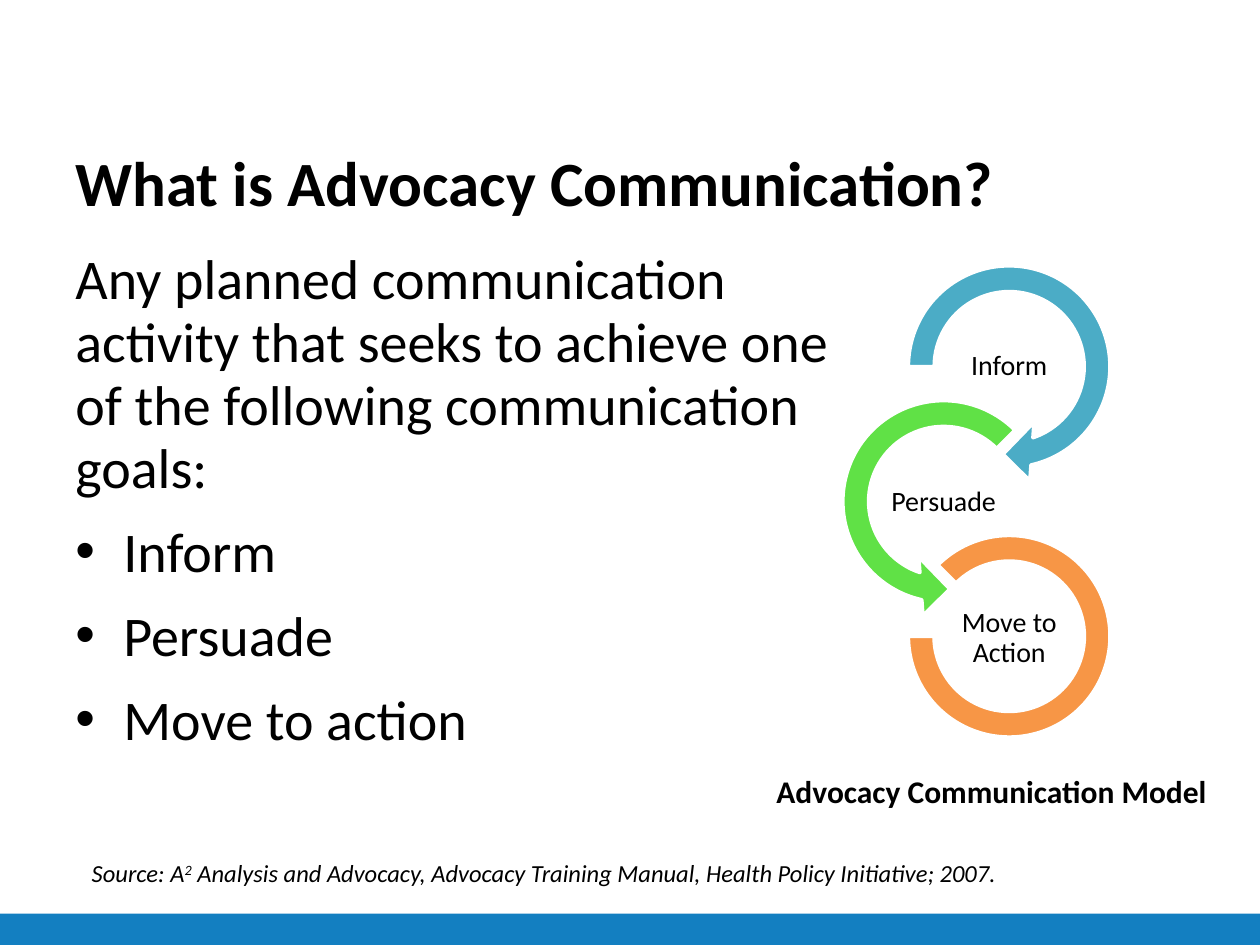
from dataclasses import dataclass

from lxml import etree
from pptx import Presentation
from pptx.dml.color import RGBColor
from pptx.enum.shapes import MSO_SHAPE
from pptx.enum.text import MSO_ANCHOR, PP_ALIGN
from pptx.oxml.ns import qn
from pptx.util import Inches, Pt

RECTANGLE = MSO_SHAPE.RECTANGLE
RIGHT_ARROW, LEFT_ARROW = MSO_SHAPE.CIRCULAR_ARROW, MSO_SHAPE.LEFT_CIRCULAR_ARROW
ARC = MSO_SHAPE.BLOCK_ARC
LEFT, CENTER = PP_ALIGN.LEFT, PP_ALIGN.CENTER
TOP, MIDDLE = MSO_ANCHOR.TOP, MSO_ANCHOR.MIDDLE
TITLE_ONLY = 5
COLUMNS, ROWS = 100, 75


@dataclass(frozen=True)
class Theme:
    font: str = "Calibri"
    ink: str = "000000"
    paper: str = "FFFFFF"
    bar: str = "137FC1"
    inform: str = "4BACC6"
    persuade: str = "60E146"
    act: str = "F79646"
    title: int = 36
    body: int = 32
    caption: int = 18
    label: int = 16
    source: int = 14


def apply(target, values):
    for name, value in values.items():
        setattr(target, name, value)


class SlideBuilder:
    def __init__(self, deck, theme):
        self.theme = theme
        self.cell_width = deck.slide_width / COLUMNS
        self.cell_height = deck.slide_height / ROWS
        self.page = deck.slides.add_slide(deck.slide_layouts[TITLE_ONLY])

    def area(self, column, row, columns, rows):
        return (round(column * self.cell_width), round(row * self.cell_height),
                round(columns * self.cell_width), round(rows * self.cell_height))

    def format_font(self, font, size, **values):
        apply(font, {"name": self.theme.font, "size": Pt(size), **values})
        font.color.rgb = RGBColor.from_string(self.theme.ink)

    def title(self, text, place):
        box = self.page.shapes.title
        apply(box, dict(zip(("left", "top", "width", "height"), self.area(*place))))
        apply(box.text_frame, {"text": text, "vertical_anchor": MIDDLE, "word_wrap": True})
        para = box.text_frame.paragraphs[0]
        para.alignment = LEFT
        self.format_font(para.font, self.theme.title, bold=True)

    def text(self, lines, place, size, anchor=TOP, inset=None, layout=None, **font):
        """Each line is a list of (text, format) spans."""
        frame = self.page.shapes.add_textbox(*self.area(*place)).text_frame
        apply(frame, {"word_wrap": True, "vertical_anchor": anchor})
        if inset is not None:
            sides = ("left", "top", "right", "bottom")
            apply(frame, {f"margin_{side}": Inches(inset) for side in sides})
        for number, spans in enumerate(lines):
            para = frame.paragraphs[0] if number == 0 else frame.add_paragraph()
            apply(para, layout or {})
            if number == 0:
                para.space_before = Pt(0)
            for words, values in spans:
                span = para.add_run()
                span.text = words
                self.format_font(span.font, size, **font)
                for name, value in values.items():
                    span.font._element.set(name, value)
        return frame

    def bullet(self, para, indent):
        properties = para._p.get_or_add_pPr()
        properties.set("marL", str(Inches(indent)))
        properties.set("indent", str(-Inches(indent)))
        etree.SubElement(properties, qn("a:buFont"), typeface="Arial")
        etree.SubElement(properties, qn("a:buChar"), char="•")

    def shape(self, kind, place, fill, adjustments=(), outline=None):
        shape = self.page.shapes.add_shape(kind, *self.area(*place))
        shape.shadow.inherit = False
        shape.fill.solid()
        shape.fill.fore_color.rgb = RGBColor.from_string(fill)
        if outline:
            shape.line.color.rgb = RGBColor.from_string(self.theme.paper)
            shape.line.width = Pt(outline)
        else:
            shape.line.fill.background()
        for index, value in enumerate(adjustments):
            shape.adjustments[index] = value


def main():
    deck = Presentation()
    deck.slide_width, deck.slide_height = Inches(10), Inches(7.5)
    theme = Theme()
    builder = SlideBuilder(deck, theme)

    # Footer bar and title
    builder.shape(RECTANGLE, (0, 72.5, COLUMNS, 2.5), theme.bar)
    builder.title("What is Advocacy Communication?", (5, 10.5, 90, 7.8))

    # Definition and its goals
    lines = ["Any planned communication activity that seeks to achieve one "
             "of the following communication goals:",
             "Inform", "Persuade", "Move to action"]
    frame = builder.text([[(line, {})] for line in lines], (5, 19.2, 62.5, 45.8), theme.body,
                         layout={"line_spacing": Pt(36), "space_before": Pt(12)})
    for para in frame.paragraphs[1:]:
        builder.bullet(para, 0.38)

    # Communication model: three arcs winding down around their labels
    first_row, arc_step, label_step = 29.1, 10.7, 10.8
    right, left = 80.1, 74.9
    label_width, label_height = 10.4, 5.2
    steps = [
        ("Inform", RIGHT_ARROW, right, 18.6, theme.inform, (0.11, 11.42, 45, 108, 0.125)),
        ("Persuade", LEFT_ARROW, left, 18.6, theme.persuade, (0.11, 11.42, 63, 189, 0.125)),
        ("Move to Action", ARC, right, 16, theme.act, (135, 108, 0.127)),
    ]
    for number, (name, kind, center, size, color, adjustments) in enumerate(steps):
        row = first_row + number * arc_step
        builder.shape(kind, (center - size / 2, row - size / 2, size, size),
                      color, adjustments, outline=2)
        row = first_row + number * label_step
        builder.text([[(name, {})]],
                     (center - label_width / 2, row - label_height / 2,
                      label_width, label_height),
                     theme.label, MIDDLE, 0.01,
                     {"alignment": CENTER, "line_spacing": 0.9})

    # Caption and source
    builder.text([[("Advocacy Communication Model", {})]], (58.3, 60.8, 40.8, 4),
                 theme.caption, layout={"alignment": CENTER}, bold=True)
    builder.text([[("Source: A", {}), ("2", {"baseline": "30000"}),
                   (" Analysis and Advocacy, Advocacy Training Manual, "
                    "Health Policy Initiative; 2007.", {})]],
                 (6.3, 67.6, 83.3, 3.4), theme.source, italic=True)

    deck.save("out.pptx")


if __name__ == "__main__":
    main()
